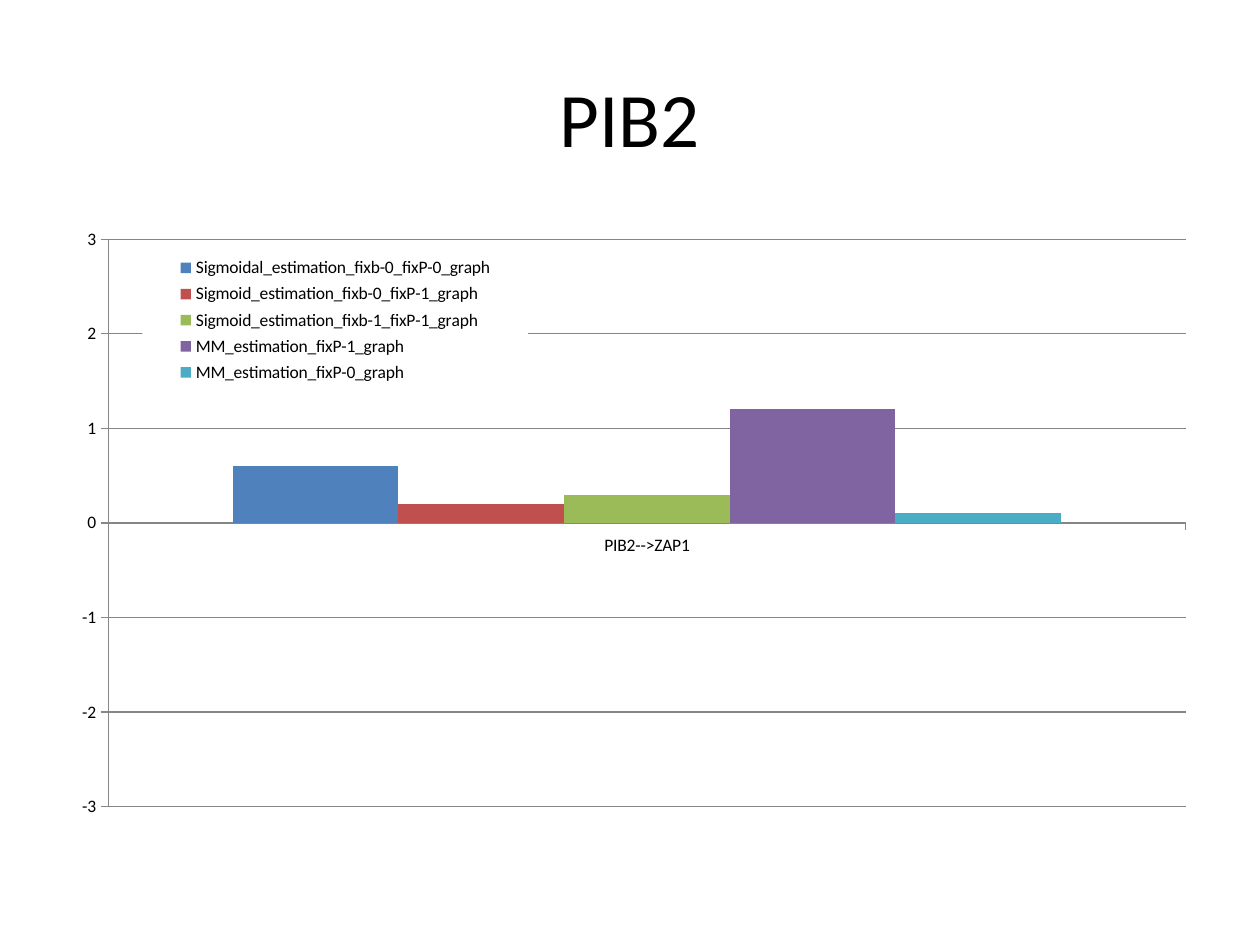
from pptx import Presentation
from pptx.chart.data import CategoryChartData
from pptx.dml.color import RGBColor
from pptx.enum.chart import XL_CHART_TYPE, XL_LEGEND_POSITION, XL_TICK_MARK
from pptx.enum.text import MSO_ANCHOR, PP_ALIGN
from pptx.oxml import parse_xml
from pptx.oxml.ns import nsdecls
from pptx.util import Inches, Pt

FONT = "Calibri"
BLACK = RGBColor(0x00, 0x00, 0x00)
GRAY = RGBColor(0x86, 0x86, 0x86)
BLUE = RGBColor(0x4F, 0x81, 0xBD)
RED = RGBColor(0xC0, 0x50, 0x4D)
GREEN = RGBColor(0x9B, 0xBB, 0x59)
PURPLE = RGBColor(0x80, 0x64, 0xA2)
TEAL = RGBColor(0x4B, 0xAC, 0xC6)

SERIES = [
    ("Sigmoidal_estimation_fixb-0_fixP-0_graph", 0.6, BLUE),
    ("Sigmoid_estimation_fixb-0_fixP-1_graph", 0.2, RED),
    ("Sigmoid_estimation_fixb-1_fixP-1_graph", 0.3, GREEN),
    ("MM_estimation_fixP-1_graph", 1.2, PURPLE),
    ("MM_estimation_fixP-0_graph", 0.1, TEAL),
]


def layout(box, inner=False):
    """Manual chart layout from shares of the chart's size."""
    target = '<c:layoutTarget val="inner"/>' if inner else ""
    modes = '<c:xMode val="edge"/><c:yMode val="edge"/>'
    sides = "".join(f'<c:{k} val="{v}"/>' for k, v in zip("xywh", box))
    return parse_xml(f'<c:layout {nsdecls("c")}><c:manualLayout>{target}{modes}'
                     f'{sides}</c:manualLayout></c:layout>')


prs = Presentation()
prs.slide_width, prs.slide_height = Inches(10), Inches(7.5)
W, H = prs.slide_width, prs.slide_height
slide = prs.slides.add_slide(prs.slide_layouts[6])
left, wide = int(W * 0.05), int(W * 0.9)

# Title
title = slide.shapes.add_textbox(left, int(H * 0.04), wide, Inches(1.25))
frame = title.text_frame
frame.word_wrap = True
frame.vertical_anchor = MSO_ANCHOR.MIDDLE
para = frame.paragraphs[0]
para.alignment = PP_ALIGN.CENTER
run = para.add_run()
run.text = "PIB2"
run.font.name, run.font.size = FONT, Pt(44)
run.font.color.rgb = BLACK

# Column chart
data = CategoryChartData()
data.categories = ["PIB2-->ZAP1"]
for name, value, _ in SERIES:
    data.add_series(name, [value])
chart = slide.shapes.add_chart(XL_CHART_TYPE.COLUMN_CLUSTERED, left, Inches(1.75),
                               wide, int(H * 0.66), data).chart
chart.has_title = False
chart.font.name, chart.font.size = FONT, Pt(10)
chart.font.color.rgb = BLACK
plot = chart.plots[0]
plot.vary_by_categories = False
plot.gap_width, plot.overlap = 150, 0
for bar, (_, _, color) in zip(plot.series, SERIES):
    bar.invert_if_negative = False
    bar.format.fill.solid()
    bar.format.fill.fore_color.rgb = color

# Axes and gridlines
scale = chart.value_axis
scale.minimum_scale, scale.maximum_scale, scale.major_unit = -3, 3, 1
scale.has_major_gridlines = True
for axis in (chart.category_axis, scale):
    axis.major_tick_mark = XL_TICK_MARK.OUTSIDE
    axis.minor_tick_mark = XL_TICK_MARK.NONE
for part in (chart.category_axis, scale, scale.major_gridlines):
    part.format.line.color.rgb = GRAY
    part.format.line.width = Pt(0.75)

# White legend over the plot
chart.has_legend = True
legend = chart.legend
legend.position = XL_LEGEND_POSITION.RIGHT
legend.include_in_layout = False
key = legend._element
area = chart._chartSpace.xpath("c:chart/c:plotArea")[0]
for node in (key, area):
    for old in node.xpath("c:layout"):
        node.remove(old)
key.xpath("c:legendPos")[0].addnext(layout((0.07, 0.05, 0.34, 0.22)))
key.xpath("c:overlay")[0].addnext(parse_xml(
    f'<c:spPr {nsdecls("c", "a")}><a:solidFill><a:srgbClr val="FFFFFF"/>'
    '</a:solidFill></c:spPr>'))
area.insert(0, layout((0.04, 0.03, 0.95, 0.91), inner=True))

prs.save("out.pptx")
